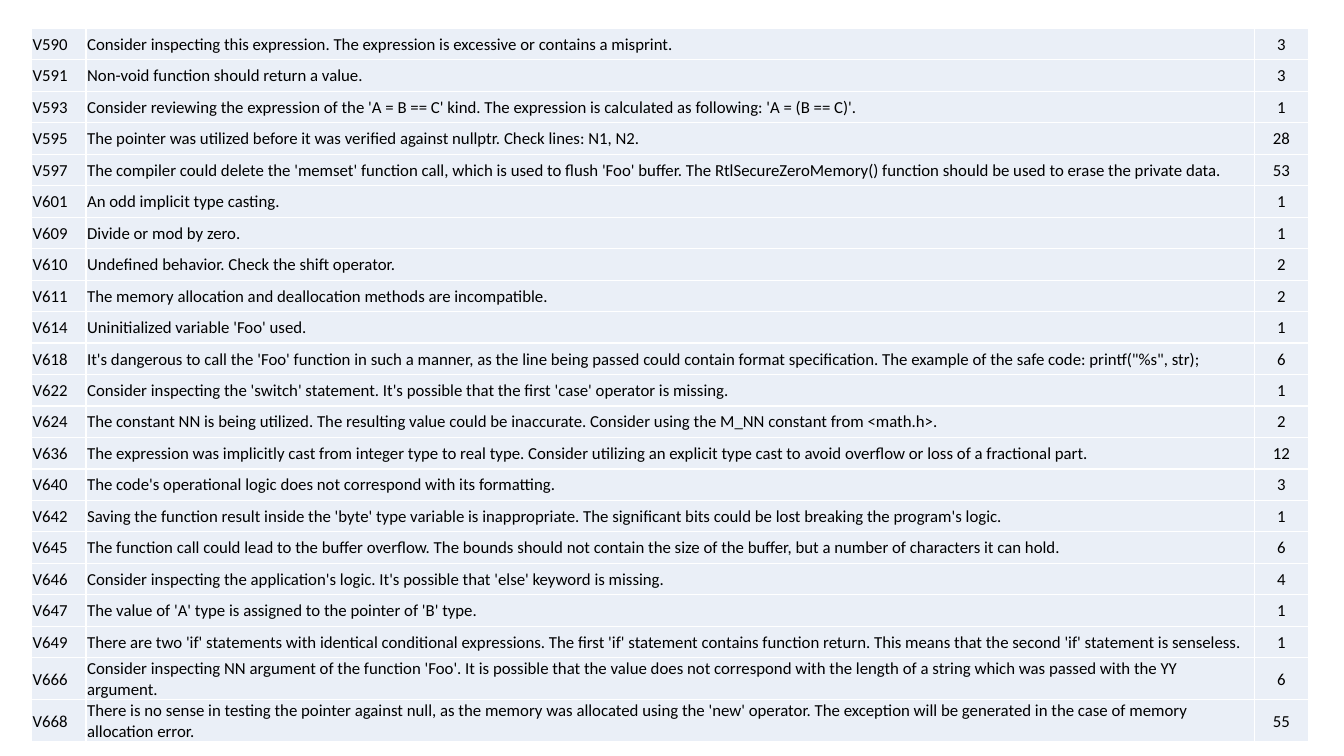
from typing import NamedTuple

from lxml.etree import SubElement as Sub
from pptx import Presentation
from pptx.dml.color import RGBColor
from pptx.enum.text import MSO_ANCHOR as Anchor, PP_ALIGN as Align
from pptx.oxml.ns import qn
from pptx.table import _Cell as Cell
from pptx.util import Emu, Pt

PX = 9525  # EMU per px, 96 px to the inch

BLACK = RGBColor(0x00, 0x00, 0x00)
WHITE = RGBColor(0xFF, 0xFF, 0xFF)
PALE = RGBColor(0xEA, 0xEF, 0xF7)

LEFT, TOP = 30, 27
COLS = (52, 1113, 51)
ROW, LAST = 30, 38


class Rule(NamedTuple):
    code: str
    note: str
    count: int


RULES = [
    Rule("V590", "Consider inspecting this expression. The expression is excessive or contains a misprint.", 3),
    Rule("V591", "Non-void function should return a value.", 3),
    Rule("V593", "Consider reviewing the expression of the 'A = B == C' kind. "
         "The expression is calculated as following: 'A = (B == C)'.", 1),
    Rule("V595", "The pointer was utilized before it was verified against nullptr. Check lines: N1, N2.", 28),
    Rule("V597", "The compiler could delete the 'memset' function call, which is used to flush 'Foo' buffer. "
         "The RtlSecureZeroMemory() function should be used to erase the private data.", 53),
    Rule("V601", "An odd implicit type casting.", 1),
    Rule("V609", "Divide or mod by zero.", 1),
    Rule("V610", "Undefined behavior. Check the shift operator.", 2),
    Rule("V611", "The memory allocation and deallocation methods are incompatible.", 2),
    Rule("V614", "Uninitialized variable 'Foo' used.", 1),
    Rule("V618", "It's dangerous to call the 'Foo' function in such a manner, as the line being passed "
         "could contain format specification. The example of the safe code: printf(\"%s\", str);", 6),
    Rule("V622", "Consider inspecting the 'switch' statement. "
         "It's possible that the first 'case' operator is missing.", 1),
    Rule("V624", "The constant NN is being utilized. The resulting value could be inaccurate. "
         "Consider using the M_NN constant from <math.h>.", 2),
    Rule("V636", "The expression was implicitly cast from integer type to real type. "
         "Consider utilizing an explicit type cast to avoid overflow or loss of a fractional part.", 12),
    Rule("V640", "The code's operational logic does not correspond with its formatting.", 3),
    Rule("V642", "Saving the function result inside the 'byte' type variable is inappropriate. "
         "The significant bits could be lost breaking the program's logic.", 1),
    Rule("V645", "The function call could lead to the buffer overflow. "
         "The bounds should not contain the size of the buffer, but a number of characters it can hold.", 6),
    Rule("V646", "Consider inspecting the application's logic. It's possible that 'else' keyword is missing.", 4),
    Rule("V647", "The value of 'A' type is assigned to the pointer of 'B' type.", 1),
    Rule("V649", "There are two 'if' statements with identical conditional expressions. "
         "The first 'if' statement contains function return. "
         "This means that the second 'if' statement is senseless.", 1),
    Rule("V666", "Consider inspecting NN argument of the function 'Foo'. It is possible that the value does not "
         "correspond with the length of a string which was passed with the YY argument.", 6),
    Rule("V668", "There is no sense in testing the pointer against null, as the memory was allocated using the "
         "'new' operator. The exception will be generated in the case of memory allocation error.", 55),
]


def px(size: int) -> Emu:
    return Emu(size * PX)


def write(cell: Cell, text: str, *, align: Align = Align.LEFT, size: int = 12,
          color: RGBColor = BLACK, face: str = "Calibri") -> None:
    para = cell.text_frame.paragraphs[0]
    para.alignment = align
    run = para.add_run()
    run.text = text
    run.font.name, run.font.size = face, Pt(size)
    run.font.color.rgb = color


def frame(cell: Cell) -> None:
    """Set the fill, insets and borders of a cell."""
    cell.fill.solid()
    cell.fill.fore_color.rgb = PALE
    cell.vertical_anchor = Anchor.MIDDLE
    cell.margin_left = cell.margin_right = cell.margin_top = px(1)
    cell.margin_bottom = 0
    props = cell._tc.get_or_add_tcPr()
    # Borders stand before the fill
    for spot, side in enumerate(("lnL", "lnR", "lnT", "lnB")):
        line = Sub(props, qn(f"a:{side}"), w=str(Pt(1)))
        Sub(Sub(line, qn("a:solidFill")), qn("a:srgbClr"), val=str(WHITE))
        props.insert(spot, line)


def main() -> None:
    deck = Presentation()
    deck.slide_width, deck.slide_height = px(1280), px(720)
    slide = deck.slides.add_slide(deck.slide_layouts[6])

    # Table grid
    high = ROW * (len(RULES) - 1) + LAST
    table = slide.shapes.add_table(len(RULES), len(COLS), px(LEFT), px(TOP),
                                   px(sum(COLS)), px(high)).table
    table.first_row = table.horz_banding = False
    for col, width in zip(table.columns, COLS):
        col.width = px(width)
    for row in table.rows:
        row.height = px(ROW)
    table.rows[len(RULES) - 1].height = px(LAST)

    # Rules, one a row
    for row, rule in zip(table.rows, RULES):
        for cell, value in zip(row.cells, rule):
            frame(cell)
            write(cell, str(value), align=Align.CENTER if isinstance(value, int) else Align.LEFT)

    deck.save("out.pptx")


if __name__ == "__main__":
    main()
